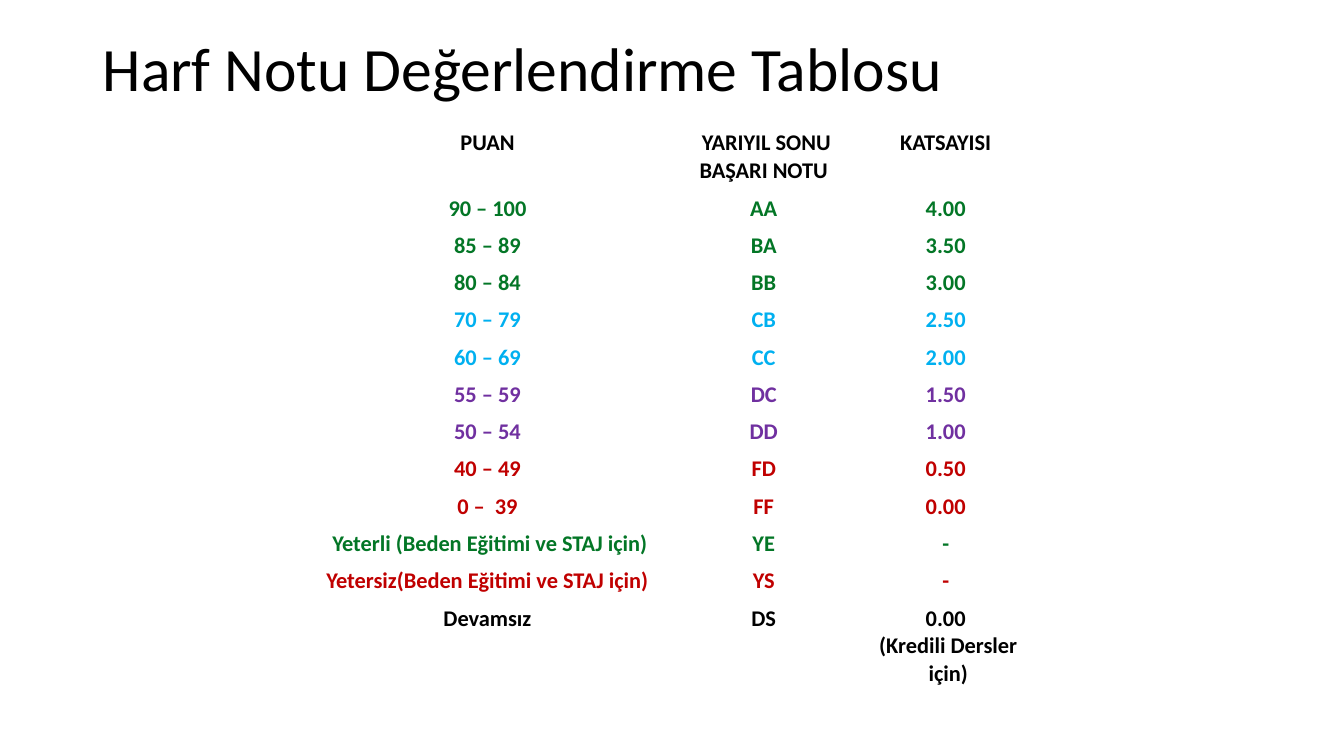
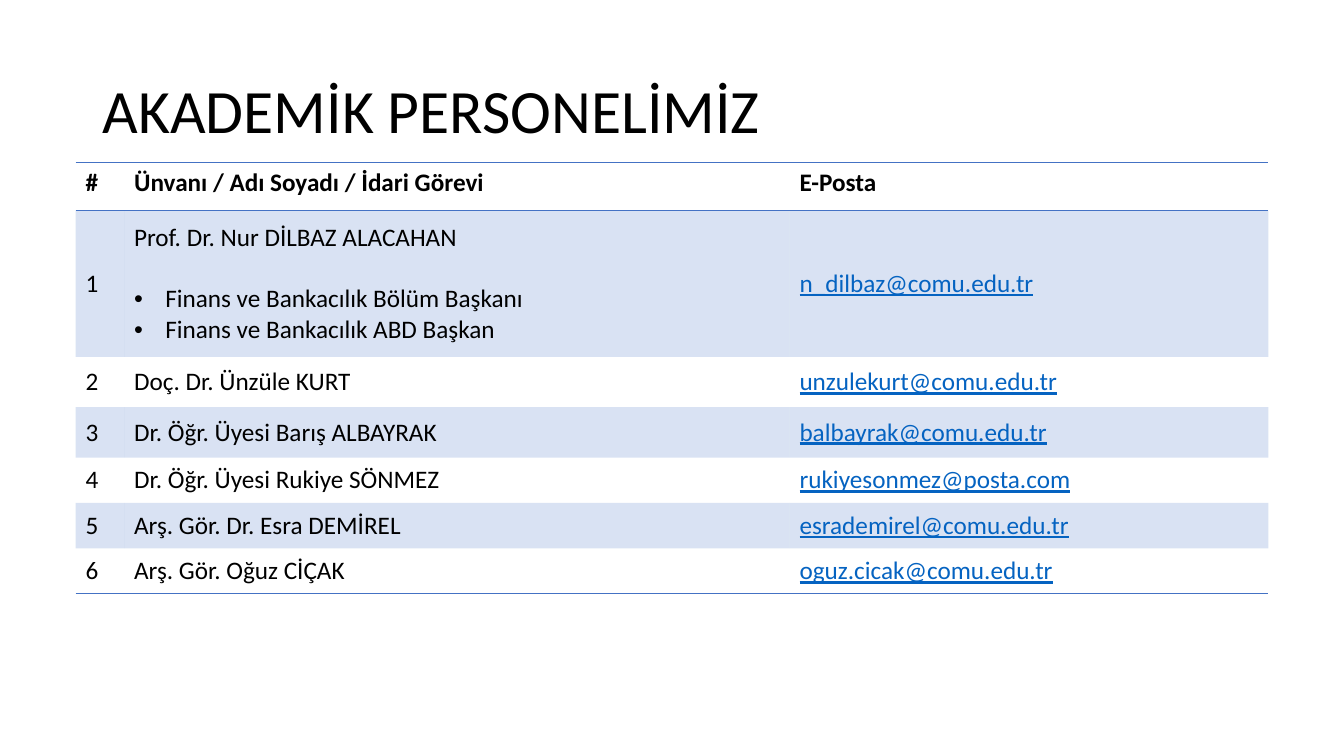
"""Build the letter grade table and the academic staff table slides."""
from dataclasses import dataclass

from lxml import etree
from pptx import Presentation
from pptx import util as u
from pptx.dml.color import RGBColor
from pptx.enum import text
from pptx.oxml import ns

FONT = "Calibri"
NO_STYLE = "{2D5ABB26-0587-4C30-8999-92F81FD0307C}"
COLORS = {
    "black": "000000",
    "green": "037626",
    "sky": "00B0F0",
    "purple": "7030A0",
    "red": "C00000",
    "accent": "4472C4",
    "link": "0563C1",
}


@dataclass(frozen=True)
class TextStyle:
    size: float
    color: str = "black"
    bold: bool = False
    underline: bool = False


@dataclass(frozen=True)
class Grade:
    score: str
    letter: str
    coefficient: str
    color: str


@dataclass(frozen=True)
class Member:
    name: str
    email: str
    duties: tuple[str, ...] = ()


TITLE = TextStyle(44)
HEADING = TextStyle(18, bold=True)
BODY = TextStyle(18)
LINK = TextStyle(18, "link", underline=True)

GRADES = (
    Grade("PUAN ", "YARIYIL SONU BAŞARI NOTU ", "KATSAYISI ", "black"),
    Grade("90 – 100 ", "AA ", "4.00 ", "green"),
    Grade("85 – 89 ", "BA ", "3.50 ", "green"),
    Grade("80 – 84 ", "BB ", "3.00 ", "green"),
    Grade("70 – 79 ", "CB ", "2.50 ", "sky"),
    Grade("60 – 69 ", "CC ", "2.00 ", "sky"),
    Grade("55 – 59 ", "DC ", "1.50 ", "purple"),
    Grade("50 – 54 ", "DD ", "1.00 ", "purple"),
    Grade("40 – 49 ", "FD ", "0.50 ", "red"),
    Grade("0 –  39 ", "FF ", "0.00 ", "red"),
    Grade("Yeterli (Beden Eğitimi ve STAJ için)", "YE ", "- ", "green"),
    Grade("Yetersiz(Beden Eğitimi ve STAJ için) ", "YS ", "- ", "red"),
    Grade("Devamsız ", "DS ", "0.00 \n(Kredili Dersler için)", "black"),
)

STAFF_HEADINGS = ("#", "Ünvanı / Adı Soyadı / İdari Görevi", "E-Posta")
STAFF = (
    Member("Prof. Dr. Nur DİLBAZ ALACAHAN", "n_dilbaz@comu.edu.tr",
           ("Finans ve Bankacılık Bölüm Başkanı", "Finans ve Bankacılık ABD Başkan")),
    Member("Doç. Dr. Ünzüle KURT", "unzulekurt@comu.edu.tr"),
    Member("Dr. Öğr. Üyesi Barış ALBAYRAK", "balbayrak@comu.edu.tr"),
    Member("Dr. Öğr. Üyesi Rukiye SÖNMEZ", "rukiyesonmez@posta.com"),
    Member("Arş. Gör. Dr. Esra DEMİREL", "esrademirel@comu.edu.tr"),
    Member("Arş. Gör. Oğuz CİÇAK", "oguz.cicak@comu.edu.tr"),
)


def add_text(paragraph, content: str, style: TextStyle) -> None:
    for index, line in enumerate(content.split("\n")):
        if index:
            paragraph.add_line_break()
        run = paragraph.add_run()
        run.text = line
        run.font.name = FONT
        run.font.size = u.Pt(style.size)
        run.font.bold = style.bold
        run.font.underline = style.underline
        run.font.color.rgb = RGBColor.from_string(COLORS[style.color])


def add_titled_slide(presentation, title: str, top: float, height: float):
    slide = presentation.slides.add_slide(presentation.slide_layouts[6])
    shape = slide.shapes.add_textbox(u.Inches(0.92), u.Inches(top), u.Inches(11.5), u.Inches(height))
    frame = shape.text_frame
    frame.word_wrap = True
    frame.vertical_anchor = text.MSO_ANCHOR.MIDDLE
    frame.paragraphs[0].line_spacing = 0.9
    add_text(frame.paragraphs[0], title, TITLE)
    return slide


def add_plain_table(slide, left: float, top: float, widths: list[float], heights: list[float]):
    table = slide.shapes.add_table(
        len(heights), len(widths), u.Inches(left), u.Inches(top),
        u.Inches(sum(widths)), u.Inches(sum(heights))).table
    table.first_row = table.horz_banding = False
    table._tbl.tblPr.find(ns.qn("a:tableStyleId")).text = NO_STYLE
    for column, width in zip(table.columns, widths):
        column.width = u.Inches(width)
    for row, height in zip(table.rows, heights):
        row.height = u.Inches(height)
    for cell in table.iter_cells():
        cell.fill.background()
    return table


def add_color(parent, color: str):
    fill = etree.SubElement(parent, ns.qn("a:solidFill"))
    etree.SubElement(fill, ns.qn("a:srgbClr"), val=COLORS[color])


def add_borders(cell, *sides: str) -> None:
    properties = cell._tc.get_or_add_tcPr()
    for index, side in enumerate(sides):
        line = etree.Element(ns.qn(f"a:ln{side}"), w=str(u.Pt(1)))
        add_color(line, "accent")
        properties.insert(index, line)


def tint_cell(cell) -> None:
    cell.fill.solid()
    cell.fill.fore_color.rgb = RGBColor.from_string(COLORS["accent"])
    color = cell._tc.tcPr.find(".//" + ns.qn("a:srgbClr"))
    etree.SubElement(color, ns.qn("a:alpha"), val="20000")


def add_bullet(paragraph) -> None:
    properties = paragraph._p.get_or_add_pPr()
    indent = u.Inches(0.31)
    properties.set("marL", str(indent))
    properties.set("indent", str(-indent))
    etree.SubElement(properties, ns.qn("a:buFont"), typeface="Arial")
    etree.SubElement(properties, ns.qn("a:buChar"), char="•")


def build_grades(presentation) -> None:
    slide = add_titled_slide(presentation, "Harf Notu Değerlendirme Tablosu", 0.18, 1.06)
    heights = [0.65] + [0.37] * (len(GRADES) - 2) + [0.92]
    table = add_plain_table(slide, 3.05, 1.23, [3.62, 1.86, 1.75], heights)
    for row, grade in zip(table.rows, GRADES):
        style = TextStyle(16, grade.color, bold=True)
        for cell, content in zip(row.cells, (grade.score, grade.letter, grade.coefficient)):
            cell.margin_left = cell.margin_right = u.Inches(0.05)
            cell.margin_top = cell.margin_bottom = u.Inches(0.05)
            paragraph = cell.text_frame.paragraphs[0]
            paragraph.alignment = text.PP_ALIGN.CENTER
            paragraph.line_spacing = 1.01
            add_text(paragraph, content, style)


def build_staff(presentation) -> None:
    slide = add_titled_slide(presentation, "AKADEMİK PERSONELİMİZ", 0.4, 1.45)
    heights = [0.48, 1.45, 0.5, 0.5, 0.45, 0.45, 0.45]
    table = add_plain_table(slide, 0.75, 1.61, [0.48, 6.6, 4.75], heights)
    for cell, heading in zip(table.rows[0].cells, STAFF_HEADINGS):
        add_text(cell.text_frame.paragraphs[0], heading, HEADING)
        add_borders(cell, "T", "B")
    for number, member in enumerate(STAFF, 1):
        entries = ((str(number), BODY), (member.name, BODY), (member.email, LINK))
        for column, (content, style) in enumerate(entries):
            cell = table.cell(number, column)
            cell.vertical_anchor = text.MSO_ANCHOR.MIDDLE
            add_text(cell.text_frame.paragraphs[0], content, style)
            if number % 2:
                tint_cell(cell)
            if number == len(STAFF):
                add_borders(cell, "B")
        for index, duty in enumerate(member.duties):
            paragraph = table.cell(number, 1).text_frame.add_paragraph()
            add_bullet(paragraph)
            if index == 0:
                paragraph.space_before = u.Pt(22)
            add_text(paragraph, duty, BODY)


def main() -> None:
    presentation = Presentation()
    presentation.slide_width = u.Inches(13.33)
    presentation.slide_height = u.Inches(7.5)
    build_grades(presentation)
    build_staff(presentation)
    presentation.save("out.pptx")


if __name__ == "__main__":
    main()
